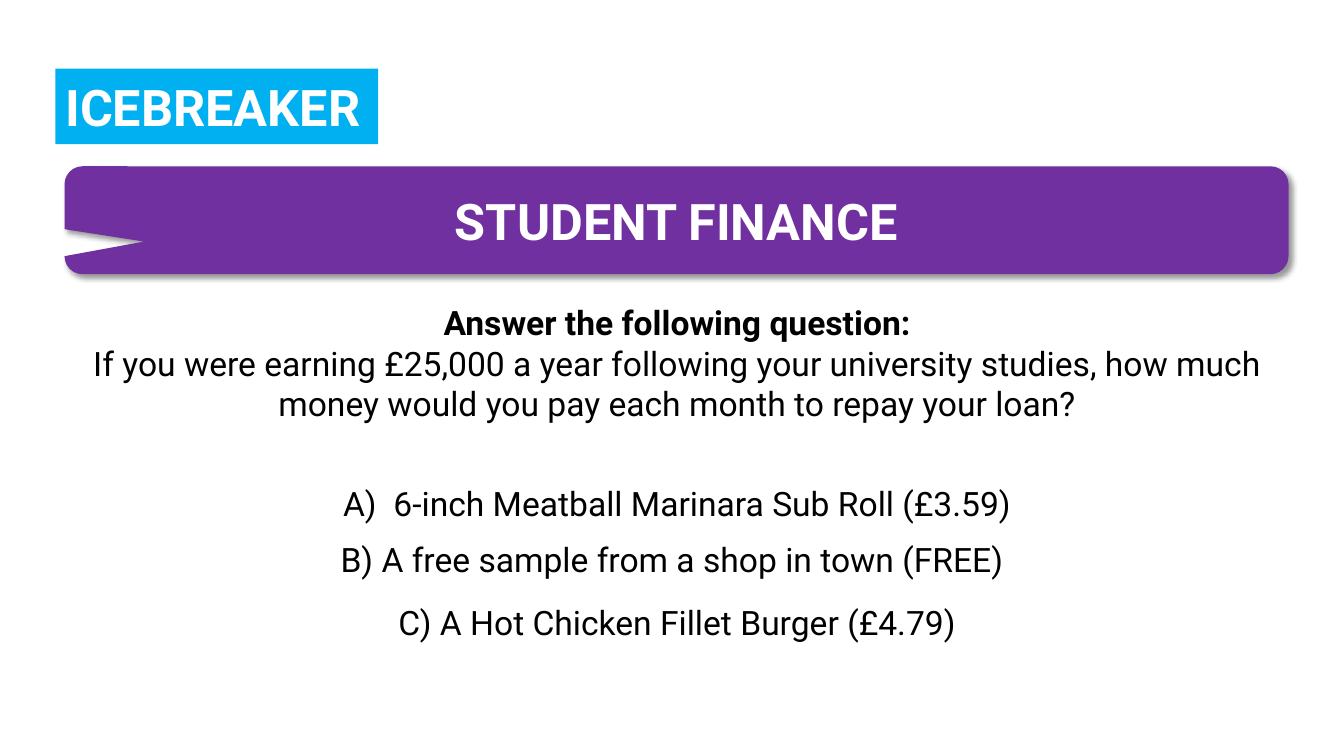
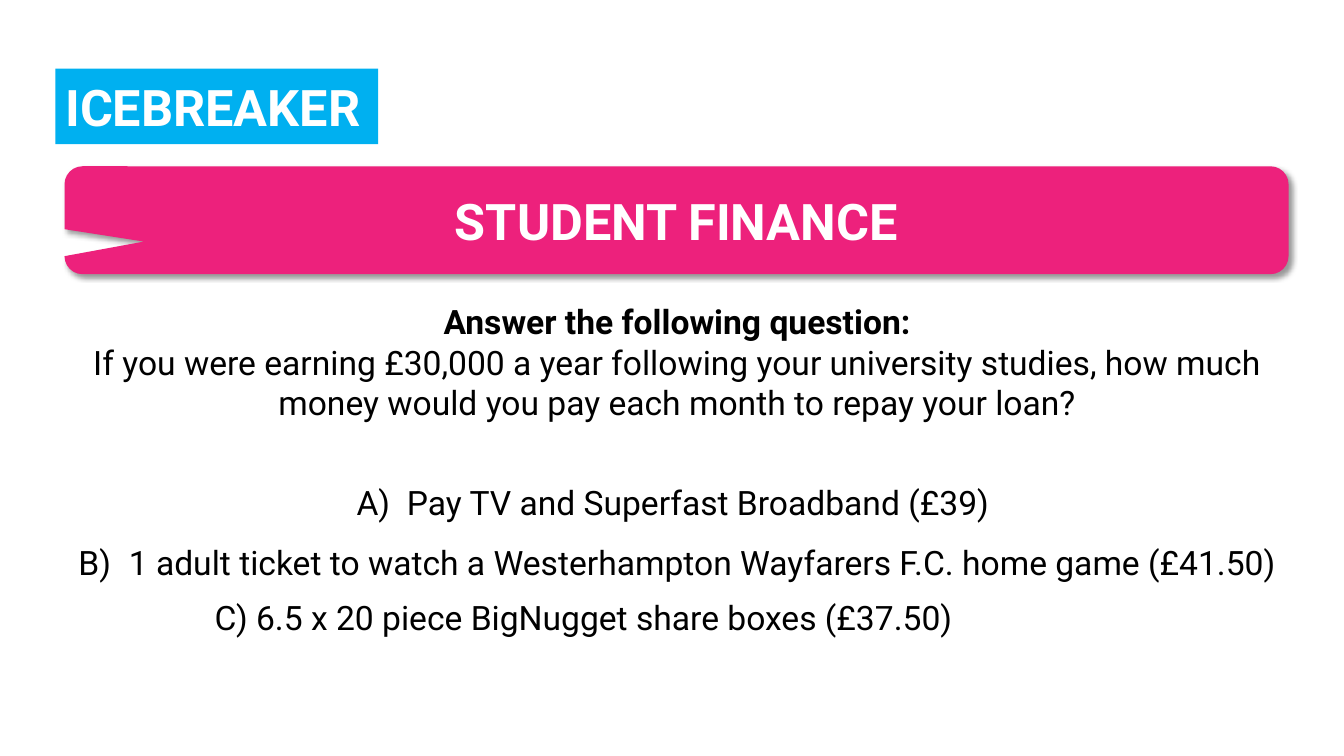
from dataclasses import dataclass

import pptx
import pptx.dml.color
import pptx.enum.shapes
import pptx.enum.text
import pptx.oxml
import pptx.oxml.ns
import pptx.util
from pptx.util import Inches

# Shared style
FONT = "Roboto"
WHITE, BLACK, TAG_BLUE = "FFFFFF", "000000", "00B0F0"
PURPLE, PINK = "7030A0", "ED217C"
TITLE_SIZE, BODY_SIZE = 36, 24
OPTION_SPACING = 1.5
SHAPES = pptx.enum.shapes.MSO_SHAPE
ALIGN = pptx.enum.text.PP_ALIGN
ANCHOR = pptx.enum.text.MSO_ANCHOR


@dataclass(frozen=True)
class Box:
    left: float
    top: float
    width: float
    height: float

    def lengths(self) -> tuple:
        return tuple(Inches(v) for v in (self.left, self.top, self.width, self.height))


@dataclass(frozen=True)
class Option:
    text: str
    space_before: float = 0
    lettered: bool = True


@dataclass(frozen=True)
class Question:
    band_color: str
    salary: str
    body_box: Box
    options: tuple
    loose_option: str
    loose_box: Box


TAG_BOX = Box(0.55, 0.68, 3.2, 0.75)
BAND_BOX = Box(0.64, 1.65, 12.14, 1.07)

QUESTIONS = (
    Question(
        PURPLE, "£25,000", Box(0.43, 2.95, 12.57, 3.53),
        (Option("6-inch Meatball Marinara Sub Roll (£3.59)", 28),
         Option("C) A Hot Chicken Fillet Burger (£4.79)", 42, lettered=False)),
        "B) A free sample from a shop in town (FREE)", Box(3.28, 5.3, 6.86, 0.5)),
    Question(
        PINK, "£30,000", Box(0.43, 2.94, 12.57, 2.93),
        (Option("Pay TV and Superfast Broadband (£39) ", 28),
         Option("1 adult ticket to watch a Westerhampton Wayfarers F.C. home game (£41.50)")),
        "C) 6.5 x 20 piece BigNugget share boxes (£37.50)", Box(2.03, 5.87, 7.61, 0.91)),
)


def rgb(color: str) -> pptx.dml.color.RGBColor:
    return pptx.dml.color.RGBColor.from_string(color)


def style_paragraph(paragraph, size: float, color: str, bold: bool = False,
                    align=ALIGN.LEFT) -> None:
    paragraph.alignment = align
    for run in paragraph.runs:
        run.font.name = FONT
        run.font.size = pptx.util.Pt(size)
        run.font.bold = bold
        run.font.color.rgb = rgb(color)


def add_letter_bullet(paragraph) -> None:
    properties = paragraph._p.get_or_add_pPr()
    properties.set("marL", str(Inches(0.5)))
    properties.set("indent", str(Inches(-0.5)))
    bullet = pptx.oxml.parse_xml(
        f'<a:buAutoNum {pptx.oxml.ns.nsdecls("a")} type="alphaUcParenR"/>')
    properties.append(bullet)


def add_shadow(shape) -> None:
    effects = shape._element.spPr.find(pptx.oxml.ns.qn("a:effectLst"))
    effects.append(pptx.oxml.parse_xml(
        f'<a:outerShdw {pptx.oxml.ns.nsdecls("a")} blurRad="{pptx.util.Pt(4)}" '
        f'dist="{pptx.util.Pt(3)}" dir="2700000" algn="tl" rotWithShape="0">'
        f'<a:srgbClr val="{BLACK}"><a:alpha val="40000"/></a:srgbClr></a:outerShdw>'))


def add_heading(slide, kind, box: Box, color: str, text: str, align):
    shape = slide.shapes.add_shape(kind, *box.lengths())
    shape.fill.solid()
    shape.fill.fore_color.rgb = rgb(color)
    shape.line.fill.background()
    shape.shadow.inherit = False
    text_frame = shape.text_frame
    text_frame.text = text
    text_frame.vertical_anchor = ANCHOR.MIDDLE
    style_paragraph(text_frame.paragraphs[0], TITLE_SIZE, WHITE, True, align)
    return shape


def add_text_frame(slide, box: Box, text: str):
    text_frame = slide.shapes.add_textbox(*box.lengths()).text_frame
    text_frame.word_wrap = True
    text_frame.text = text
    return text_frame


def add_body(slide, question: Question) -> None:
    text_frame = add_text_frame(slide, question.body_box, "Answer the following question:")
    style_paragraph(text_frame.paragraphs[0], BODY_SIZE, BLACK, True, ALIGN.CENTER)
    paragraph = text_frame.add_paragraph()
    paragraph.text = (f"If you were earning {question.salary} a year following your university "
                      "studies, how much money would you pay each month to repay your loan?")
    style_paragraph(paragraph, BODY_SIZE, BLACK, align=ALIGN.CENTER)
    for option in question.options:
        paragraph = text_frame.add_paragraph()
        paragraph.text = option.text
        paragraph.line_spacing = OPTION_SPACING
        paragraph.space_before = pptx.util.Pt(option.space_before)
        if option.lettered:
            add_letter_bullet(paragraph)
        style_paragraph(paragraph, BODY_SIZE, BLACK, align=ALIGN.CENTER)


def add_question_slide(presentation, question: Question) -> None:
    slide = presentation.slides.add_slide(presentation.slide_layouts[6])
    # Tag and title band
    add_heading(slide, SHAPES.RECTANGLE, TAG_BOX, TAG_BLUE, "ICEBREAKER", ALIGN.LEFT)
    add_body(slide, question)
    band = add_heading(slide, SHAPES.ROUNDED_RECTANGULAR_CALLOUT, BAND_BOX,
                       question.band_color, "STUDENT FINANCE", ALIGN.CENTER)
    for index, value in enumerate((-0.435, 0.198, 0.167)):
        band.adjustments[index] = value
    add_shadow(band)
    # Option set apart from the list
    text_frame = add_text_frame(slide, question.loose_box, question.loose_option)
    style_paragraph(text_frame.paragraphs[0], BODY_SIZE, BLACK)


def main() -> None:
    presentation = pptx.Presentation()
    presentation.slide_width = Inches(13.33)
    presentation.slide_height = Inches(7.5)
    for question in QUESTIONS:
        add_question_slide(presentation, question)
    presentation.save("out.pptx")


if __name__ == "__main__":
    main()
